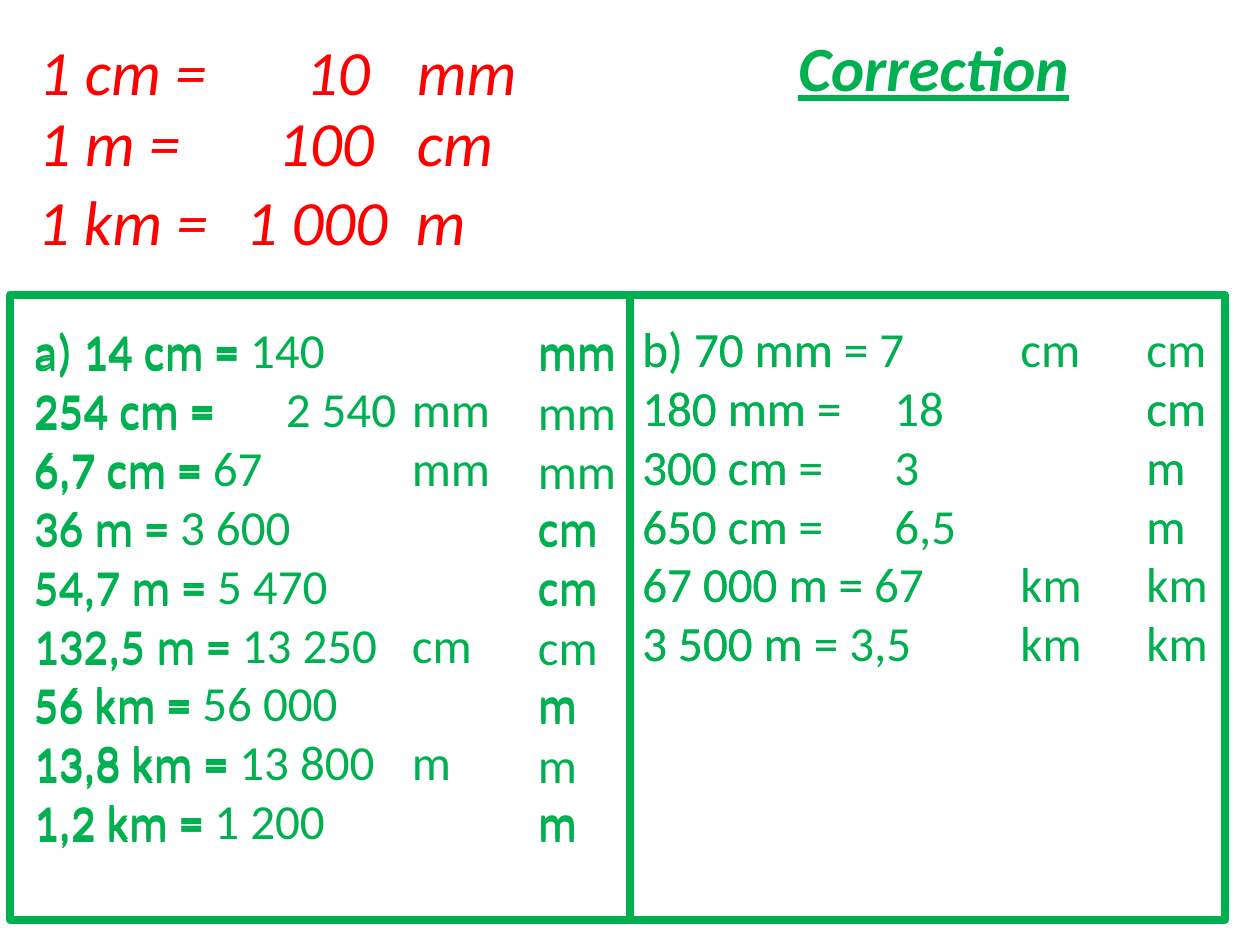
from lxml.etree import SubElement
from pptx import Presentation
from pptx.dml.color import RGBColor
from pptx.enum.shapes import MSO_CONNECTOR, MSO_SHAPE
from pptx.enum.text import MSO_AUTO_SIZE, PP_ALIGN
from pptx.oxml.ns import qn
from pptx.util import Inches, Pt

RED, GREEN = "FF0000", "00B050"
COLUMNS, ROWS = 100, 75
CELL = Inches(10) / COLUMNS
TAB_COLUMNS = (10, 20, 30, 40)

REMINDERS = [
    (2.1, 2.1, 41.6, "1 cm = \t\tmm", 23.3, 10.1, "10"),
    (2.1, 7.7, 46.4, "1 m = \t\tcm", 21.1, 13.9, "100"),
    (2, 14, 42.5, "1 km = \t\tm", 18.5, 16.1, "1 000"),
]
TO_SMALLER = [
    ("a) 14 cm = ", "\t\t\t", "140\t\t", "mm"),
    ("254 cm =", "\t\t\t", "\t2 540\t", "mm"),
    ("6,7 cm =", "\t\t\t", " 67\t\t", "mm"),
    ("36 m =", "\t\t\t", " 3 600\t\t", "cm"),
    ("54,7 m = ", "\t\t\t", "5 470\t\t", "cm"),
    ("132,5 m = ", "\t\t\t", "13 250\t", "cm"),
    ("56 km = ", "\t\t\t", "56 000\t\t", "m"),
    ("13,8 km = ", "\t\t\t", "13 800\t", "m"),
    ("1,2 km = ", "\t\t\t", "1 200\t\t", "m"),
]
TO_LARGER = [
    ("b) 70 mm = ", "\t\t", "7\t\t", "cm"),
    ("180 mm = ", "\t\t\t", "\t18\t\t", "cm"),
    ("300 cm = ", "\t\t\t", "\t3\t\t", "m"),
    ("650 cm = ", "\t\t\t", "\t6,5\t\t", "m"),
    ("67 000 m = ", "\t\t", "67\t\t", "km"),
    ("3 500 m = ", "\t\t", "3,5\t\t", "km"),
]


def color(hex_string):
    return RGBColor.from_string(hex_string)


def cells(*lengths):
    return [round(length * CELL) for length in lengths]


def set_tabs(paragraph):
    tab_list = SubElement(paragraph._p.get_or_add_pPr(), qn("a:tabLst"))
    for position in cells(*TAB_COLUMNS):
        SubElement(tab_list, qn("a:tab"), pos=str(position), algn="l")


def add_text(slide, box, lines, size=28, fill=GREEN, bold=False, italic=False,
             underline=False, align=PP_ALIGN.LEFT):
    frame = slide.shapes.add_textbox(*cells(*box)).text_frame
    frame.word_wrap = True
    frame.auto_size = MSO_AUTO_SIZE.SHAPE_TO_FIT_TEXT
    for index, line in enumerate(lines):
        paragraph = frame.add_paragraph() if index else frame.paragraphs[0]
        paragraph.alignment = align
        set_tabs(paragraph)
        run = paragraph.add_run()
        run.text = line
        font = run.font
        font.name, font.size = "Calibri", Pt(size)
        font.bold, font.italic, font.underline = bold, italic, underline
        font.color.rgb = color(fill)


def add_reminders(slide, height):
    style = dict(size=36, fill=RED, italic=True)
    for left, top, width, equality, value_left, value_width, value in REMINDERS:
        add_text(slide, (left, top, width, height), [equality], **style)
        add_text(slide, (value_left, top, value_width, height), [value], **style)


def add_heading(slide, box):
    add_text(slide, box, ["Correction"], size=36, bold=True, italic=True,
             underline=True, align=PP_ALIGN.CENTER)


def add_frame(slide, box, middle):
    left, top, width, height = box
    border = slide.shapes.add_shape(MSO_SHAPE.RECTANGLE, *cells(*box))
    border.shadow.inherit = False
    border.fill.background()
    divider = slide.shapes.add_connector(
        MSO_CONNECTOR.STRAIGHT, *cells(middle, top, middle, top + height))
    SubElement(divider._element.spPr, qn("a:effectLst"))
    for outline in (border.line, divider.line):
        outline.color.rgb = color(GREEN)
        outline.width = Pt(4.5)


def add_exercise(slide, box, conversions, answer_shift=0):
    left, top, width, height = box
    questions = [given + blank + unit for given, blank, _, unit in conversions]
    answers = [given + answer + unit for given, _, answer, unit in conversions]
    add_text(slide, box, questions)
    add_text(slide, (left, top + answer_shift, width, height), answers)


def main():
    presentation = Presentation()
    presentation.slide_width = round(COLUMNS * CELL)
    presentation.slide_height = round(ROWS * CELL)
    slide = presentation.slides.add_slide(presentation.slide_layouts[6])
    add_reminders(slide, 7.1)
    add_heading(slide, (48.4, 1.8, 51.4, 7.1))
    add_frame(slide, (0.8, 23.4, 96.4, 49.6), 50)
    add_exercise(slide, (1.7, 25.1, 49.1, 43.4), TO_SMALLER, answer_shift=-0.2)
    add_exercise(slide, (50, 24.8, 49.8, 29.3), TO_LARGER)
    presentation.save("out.pptx")


if __name__ == "__main__":
    main()
